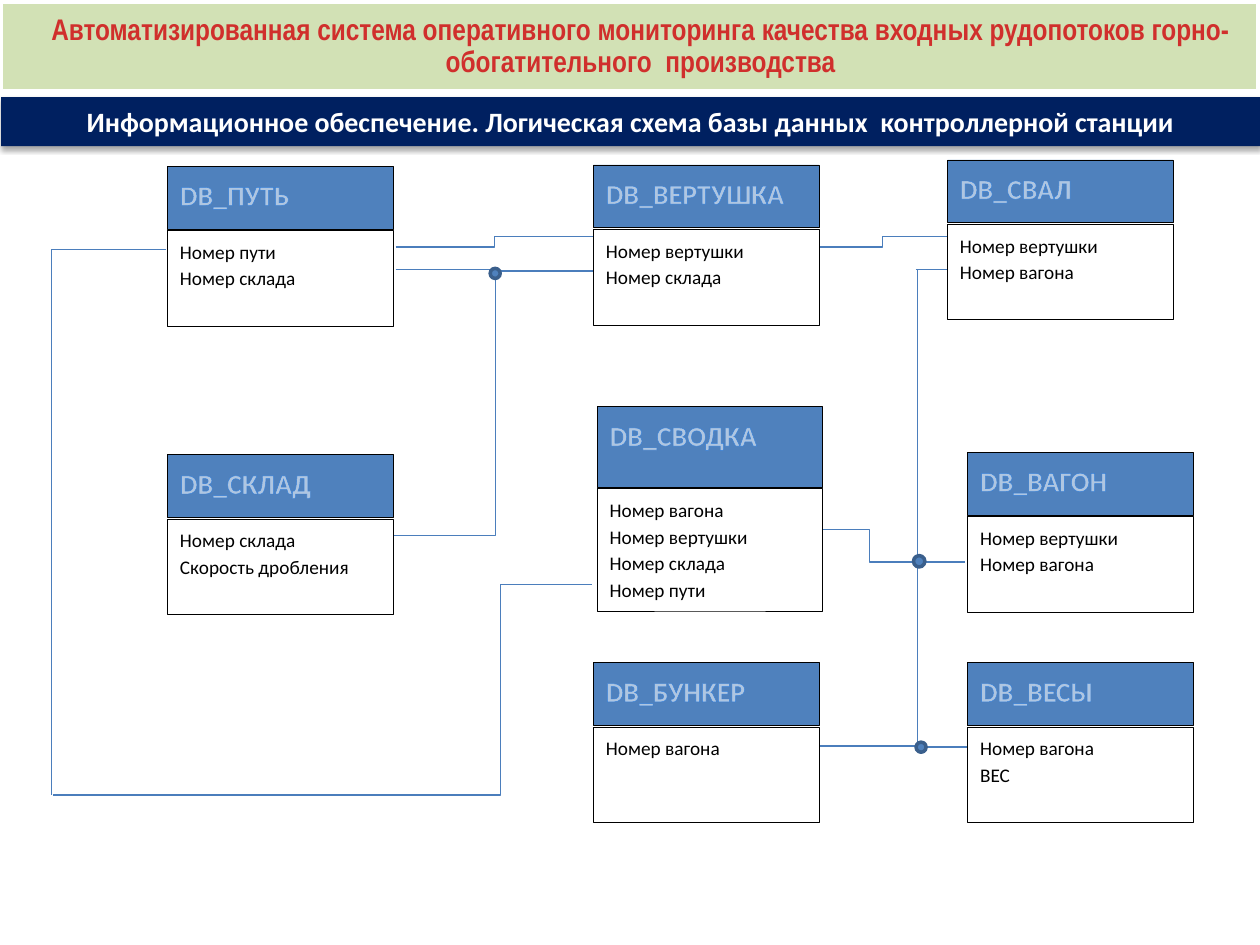
from dataclasses import dataclass

from lxml import etree
from pptx import Presentation
from pptx.dml.color import RGBColor
from pptx.enum.shapes import MSO_CONNECTOR, MSO_SHAPE
from pptx.enum.text import MSO_ANCHOR, MSO_AUTO_SIZE, PP_ALIGN
from pptx.oxml import parse_xml
from pptx.oxml.ns import nsdecls, qn
from pptx.util import Inches, Pt

ELBOW, STRAIGHT = MSO_CONNECTOR.ELBOW, MSO_CONNECTOR.STRAIGHT
RECTANGLE, OVAL = MSO_SHAPE.RECTANGLE, MSO_SHAPE.OVAL
TOP, MIDDLE = MSO_ANCHOR.TOP, MSO_ANCHOR.MIDDLE
LEFT, CENTER = PP_ALIGN.LEFT, PP_ALIGN.CENTER


@dataclass
class Theme:
    font: str = "Calibri"
    title_font: str = "Arial Narrow"
    title_size: int = 17
    heading_size: int = 16
    field_size: int = 11
    title: str = "D02F2C"
    title_fill: str = "D2E1B5"
    banner: str = "002060"
    header: str = "4F81BD"
    outline: str = "1D7DEE"
    link: str = "4B7EBC"
    dot_line: str = "3A5F8C"
    white: str = "FFFFFF"
    black: str = "000000"


theme = Theme()
presentation = Presentation()
presentation.slide_width = Inches(10)
presentation.slide_height = Inches(7.5)
slide = presentation.slides.add_slide(presentation.slide_layouts[5])


def add_box(kind, left, top, width, height, fill, line=None, line_width=0.5):
    shape = slide.shapes.add_shape(
        kind, Inches(left), Inches(top), Inches(width), Inches(height))
    shape.shadow.inherit = False
    shape.fill.solid()
    shape.fill.fore_color.rgb = RGBColor.from_string(fill)
    if line:
        shape.line.color.rgb = RGBColor.from_string(line)
        shape.line.width = Pt(line_width)
    else:
        shape.line.fill.background()
    return shape


def write_lines(shape, lines, size, color, bold=False, font=theme.font,
                align=LEFT, anchor=TOP, spacing=1.15):
    frame = shape.text_frame
    frame.word_wrap = True
    frame.auto_size = MSO_AUTO_SIZE.NONE
    frame.vertical_anchor = anchor
    for index, line in enumerate(lines):
        paragraph = frame.add_paragraph() if index else frame.paragraphs[0]
        paragraph.alignment = align
        paragraph.line_spacing = spacing
        run = paragraph.add_run()
        run.text = line
        run.font.name = font
        run.font.size = Pt(size)
        run.font.bold = bold
        run.font.color.rgb = RGBColor.from_string(color)


# Title on a rounded green panel
title = slide.shapes.title
title.left, title.top = Inches(0.01), Inches(0.02)
title.width, title.height = Inches(9.97), Inches(0.7)
title.element.spPr.append(parse_xml(
    f'<a:prstGeom {nsdecls("a")} prst="roundRect"><a:avLst>'
    '<a:gd name="adj" fmla="val 19000"/></a:avLst></a:prstGeom>'))
title.fill.solid()
title.fill.fore_color.rgb = RGBColor.from_string(theme.title_fill)
title.line.color.rgb = RGBColor.from_string(theme.white)
title.line.width = Pt(2)
title.text_frame.margin_left = Inches(0.28)
title.text_frame.margin_right = Inches(0.1)
write_lines(
    title,
    ["Автоматизированная система оперативного мониторинга качества входных "
     "рудопотоков горно-обогатительного  производства"],
    theme.title_size, theme.title, True, theme.title_font, CENTER, MIDDLE, 0.9)

# Subtitle banner with a soft shadow below
banner = add_box(RECTANGLE, 0.01, 0.77, 9.99, 0.39, theme.banner)
effects = banner.element.spPr.find(qn("a:effectLst"))
effects.append(parse_xml(
    f'<a:outerShdw {nsdecls("a")} blurRad="{Pt(3.1)}" dist="{Pt(1.8)}" '
    f'dir="5400000" rotWithShape="0"><a:srgbClr val="{theme.black}">'
    '<a:alpha val="35000"/></a:srgbClr></a:outerShdw>'))
write_lines(
    banner,
    ["Информационное обеспечение. Логическая схема базы данных  "
     "контроллерной станции"],
    theme.heading_size, theme.white, True, align=CENTER, anchor=MIDDLE, spacing=1)

# Links: start, end, and the bend as a share of the width (None is straight)
links = [
    (7.66, 4.46, 7.28, 2.14, 1),
    (7.27, 2.14, 7.52, 2.14, None),
    (7.68, 5.93, 7.28, 4.46, 1),
    (3.12, 4.25, 3.93, 2.22, 1),
    (3.14, 2.14, 4.71, 2.15, 0.5),
    (3.14, 1.96, 4.71, 1.88, 0.5),
    (6.49, 1.96, 7.52, 1.88, 0.5),
    (6.49, 5.92, 7.28, 5.92, None),
    (6.52, 4.2, 7.28, 4.46, 0.5),
    (0.42, 6.31, 4.7, 4.64, 0.83),
    (1.32, 1.98, 0.41, 6.31, 1),
]
for start_x, start_y, end_x, end_y, bend in links:
    link = slide.shapes.add_connector(
        STRAIGHT if bend is None else ELBOW,
        Inches(start_x), Inches(start_y), Inches(end_x), Inches(end_y))
    link.line.color.rgb = RGBColor.from_string(theme.link)
    link.line.width = Pt(0.75)
    properties = link.element.spPr
    etree.SubElement(properties, qn("a:effectLst"))
    if bend is not None:
        adjustments = properties.find(qn("a:prstGeom")).get_or_add_avLst()
        etree.SubElement(adjustments, qn("a:gd"), name="adj1",
                         fmla=f"val {round(bend * 100000)}")

# Database tables: name, left, top, header height, body height, fields
box_width = 1.79
gap = 0.01
tables = [
    ("DB_ПУТЬ", 1.33, 1.32, 0.5, 0.76, ["Номер пути", "Номер склада"]),
    ("DB_СКЛАД", 1.33, 3.61, 0.5, 0.76, ["Номер склада", "Скорость дробления"]),
    ("DB_ВЕРТУШКА", 4.71, 1.31, 0.5, 0.76, ["Номер вертушки", "Номер склада"]),
    ("DB_СВАЛ", 7.52, 1.27, 0.5, 0.76, ["Номер вертушки", "Номер вагона"]),
    ("DB_ВАГОН", 7.68, 3.59, 0.5, 0.76, ["Номер вертушки", "Номер вагона"]),
    ("DB_ВЕСЫ", 7.68, 5.26, 0.5, 0.76, ["Номер вагона", "ВЕС"]),
    ("DB_БУНКЕР", 4.71, 5.26, 0.5, 0.76, ["Номер вагона"]),
    ("DB_СВОДКА", 4.74, 3.23, 0.64, 0.97,
     ["Номер вагона", "Номер вертушки", "Номер склада", "Номер пути"]),
]
for name, left, top, header_height, body_height, fields in tables:
    header = add_box(RECTANGLE, left, top, box_width, header_height,
                     theme.header, theme.black)
    write_lines(header, [name], theme.heading_size, theme.white, True)
    paragraph = header.text_frame.paragraphs[0]
    paragraph.space_after = Pt(10)
    # Thin translucent outline around the letters
    paragraph.runs[0].font.fill
    paragraph.runs[0].font._element.insert(0, parse_xml(
        f'<a:ln {nsdecls("a")} w="500"><a:solidFill><a:srgbClr val="{theme.outline}">'
        '<a:alpha val="55000"/></a:srgbClr></a:solidFill></a:ln>'))
    body = add_box(RECTANGLE, left, top + header_height + gap, box_width,
                   body_height, theme.white, theme.black)
    write_lines(body, fields, theme.field_size, theme.black)

# Junction dots
for left, top, size in [(3.89, 2.13, 0.08), (7.27, 5.89, 0.08), (7.25, 4.41, 0.09)]:
    add_box(OVAL, left, top, size, size, theme.header, theme.dot_line, 2)

presentation.save("out.pptx")
